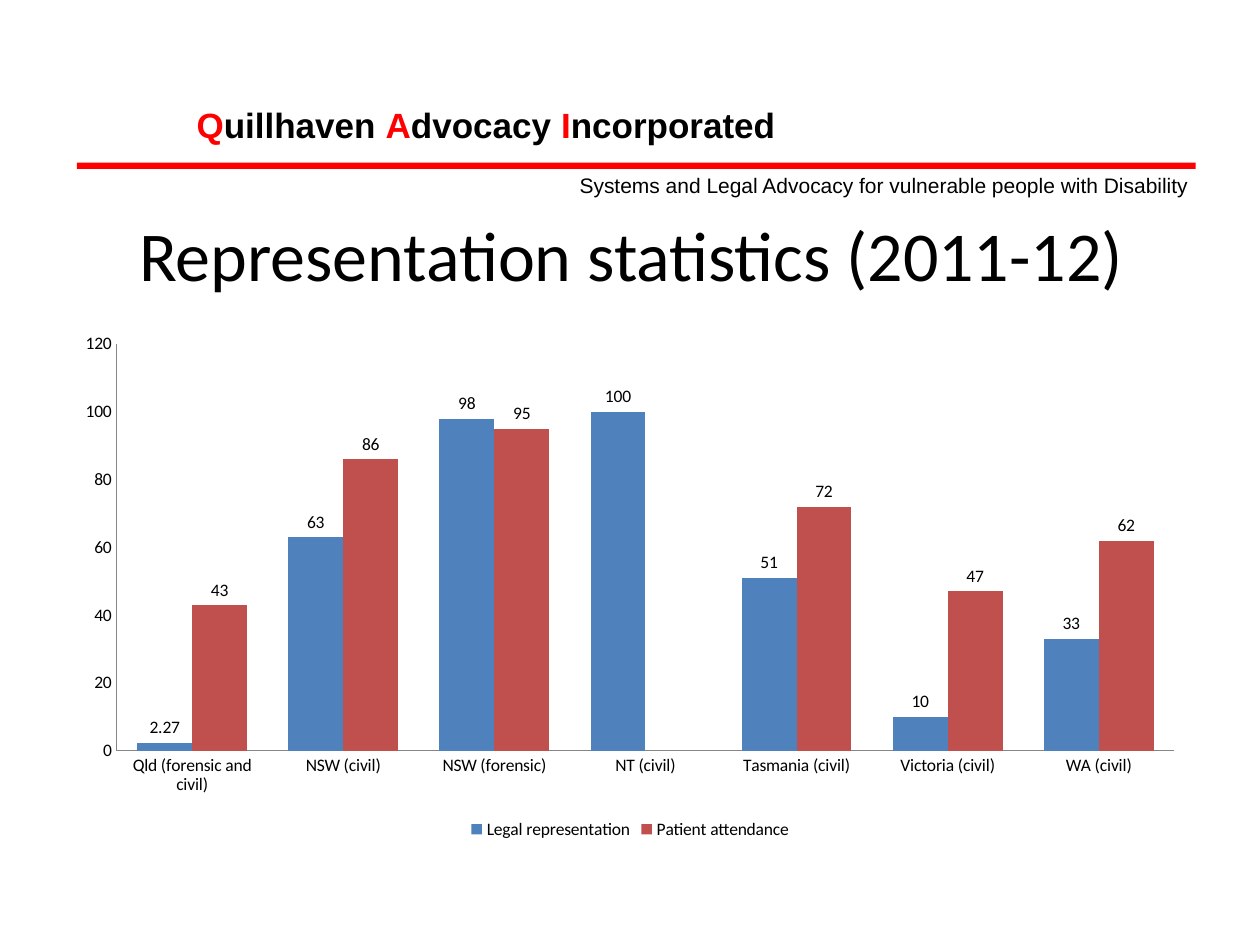
from pptx import Presentation
from pptx.chart.data import CategoryChartData
from pptx.dml.color import RGBColor
from pptx.enum.chart import XL_CHART_TYPE, XL_LABEL_POSITION, XL_LEGEND_POSITION, XL_TICK_MARK
from pptx.enum.shapes import MSO_SHAPE
from pptx.enum.text import MSO_ANCHOR, PP_ALIGN
from pptx.util import Inches, Pt

COLORS = {
    "black": "000000",
    "red": "FF0000",
    "white": "FFFFFF",
    "axis": "868686",
    "legal": "4F81BD",
    "attendance": "C0504D",
}


def color(name):
    return RGBColor.from_string(COLORS[name])


def add_text(runs, left, top, width, height, size, font="Arial", bold=False,
             align=PP_ALIGN.LEFT, anchor=MSO_ANCHOR.TOP, inset=0.04, after=10):
    box = page.shapes.add_textbox(Inches(left), Inches(top), Inches(width), Inches(height))
    frame = box.text_frame
    frame.word_wrap = True
    frame.vertical_anchor = anchor
    frame.margin_left = frame.margin_right = Inches(inset)
    frame.margin_top = frame.margin_bottom = Inches(0.04)
    para = frame.paragraphs[0]
    para.alignment = align
    para.space_after = Pt(after)
    for text, shade in runs:
        span = para.add_run()
        span.text = text
        span.font.name = font
        span.font.size = Pt(size)
        span.font.bold = bold
        span.font.color.rgb = color(shade)
    return box


deck = Presentation()
deck.slide_width = Inches(10)
deck.slide_height = Inches(7.5)
page = deck.slides.add_slide(deck.slide_layouts[6])

name_runs = []
for word in ["Quillhaven ", "Advocacy ", "Incorporated"]:
    name_runs += [(word[0], "red"), (word[1:], "black")]
name_box = add_text(name_runs, 1.52, 0.78, 4.96, 0.44, size=20, bold=True)
name_box.fill.solid()
name_box.fill.fore_color.rgb = color("white")

rule = page.shapes.add_shape(MSO_SHAPE.RECTANGLE, Inches(0.61), Inches(1.29), Inches(8.88), Inches(0.05))
rule.shadow.inherit = False
rule.fill.solid()
rule.fill.fore_color.rgb = color("red")
rule.line.fill.background()

add_text([("Systems and Legal Advocacy for vulnerable people with Disability", "black")],
         4.56, 1.33, 5.33, 0.21, size=12)
add_text([("Representation statistics (2011-12)", "black")], 0.51, 1.62, 9, 0.79, size=40,
         font="Calibri", align=PP_ALIGN.CENTER, anchor=MSO_ANCHOR.MIDDLE, inset=0.1, after=0)

data = CategoryChartData()
data.categories = ["Qld (forensic and civil)", "NSW (civil)", "NSW (forensic)", "NT (civil)",
                   "Tasmania (civil)", "Victoria (civil)", "WA (civil)"]
data.add_series("Legal representation", [2.27, 63, 98, 100, 51, 10, 33])
data.add_series("Patient attendance", [43, 86, 95, None, 72, 47, 62])
chart = page.shapes.add_chart(XL_CHART_TYPE.COLUMN_CLUSTERED, Inches(0.5), Inches(2.57),
                              Inches(9), Inches(4.13), data).chart
chart.has_title = False
chart.font.name = "Calibri"
chart.font.size = Pt(10)
chart.font.color.rgb = color("black")
chart.has_legend = True
chart.legend.position = XL_LEGEND_POSITION.BOTTOM
chart.legend.include_in_layout = False

for axis in [chart.category_axis, chart.value_axis]:
    axis.major_tick_mark = XL_TICK_MARK.NONE
    axis.minor_tick_mark = XL_TICK_MARK.NONE
    axis.has_major_gridlines = False
    axis.format.line.color.rgb = color("axis")
    axis.format.line.width = Pt(0.75)
chart.value_axis.minimum_scale = 0
chart.value_axis.maximum_scale = 120
chart.value_axis.major_unit = 20

plot = chart.plots[0]
plot.gap_width = 75
plot.overlap = 0
plot.vary_by_categories = False
for series, shade in zip(plot.series, ["legal", "attendance"]):
    series.format.fill.solid()
    series.format.fill.fore_color.rgb = color(shade)
    series.data_labels.show_value = True
    series.data_labels.position = XL_LABEL_POSITION.OUTSIDE_END

deck.save("out.pptx")
